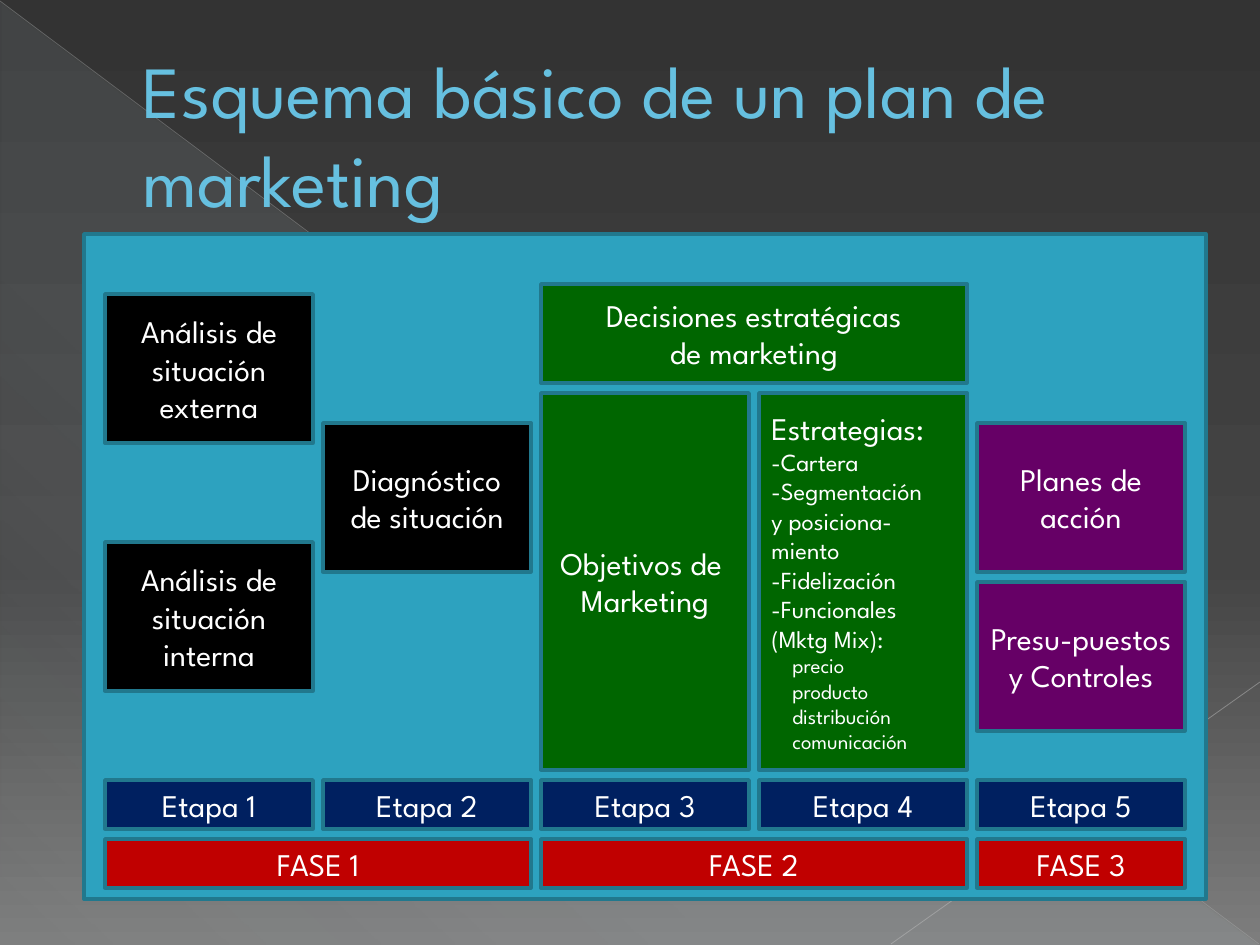
from lxml import etree
from pptx import Presentation
from pptx.dml.color import RGBColor
from pptx.enum.shapes import MSO_CONNECTOR as Connector, MSO_SHAPE as Shape
from pptx.enum.text import MSO_ANCHOR as Anchor, MSO_AUTO_SIZE as AutoSize, PP_ALIGN as Align
from pptx.oxml.ns import qn
from pptx.util import Emu, Pt

FONT = "League Spartan"
WHITE = RGBColor(0xFF, 0xFF, 0xFF)
SKY = RGBColor(0x66, 0xC0, 0xE0)
TEAL = RGBColor(0x2D, 0xA2, 0xBF)
EDGE = RGBColor(0x21, 0x78, 0x8D)
RED = RGBColor(0xC0, 0x00, 0x00)
NAVY = RGBColor(0x00, 0x20, 0x60)
BLACK = RGBColor(0x00, 0x00, 0x00)
GREEN = RGBColor(0x00, 0x66, 0x00)
PURPLE = RGBColor(0x66, 0x00, 0x66)
PALE = RGBColor(0xDE, 0xF5, 0xFA)
RAY_UPPER = RGBColor(0xB9, 0xB9, 0xB9)
RAY_LOWER = RGBColor(0xC1, 0xC1, 0xC1)
BACKGROUND = [(0, RGBColor(0x33, 0x33, 0x33), 100),
              (60, RGBColor(0x44, 0x44, 0x44), 100),
              (100, RGBColor(0x7D, 0x7D, 0x7D), 100)]
SHEEN = [(0, PALE, 10), (70, PALE, 8), (100, PALE, 1)]

# Column grid in px
LEFT, PITCH, GAP = 105, 218, 10
CARD_HEIGHT, LABEL_HEIGHT = 149, 49


def px(count):
    return Emu(round(count * 914400 / 126))


def set_opacity(color_element, percent):
    etree.SubElement(color_element, qn("a:alpha"), val=str(percent * 1000))


def paint_gradient(owner, stops, angle):
    """Swap the solid fill inside owner for a linear gradient."""
    gradient = etree.Element(qn("a:gradFill"), rotWithShape="1")
    stop_list = etree.SubElement(gradient, qn("a:gsLst"))
    for position, color, opacity in stops:
        stop = etree.SubElement(stop_list, qn("a:gs"), pos=str(position * 1000))
        color_element = etree.SubElement(stop, qn("a:srgbClr"), val=str(color))
        if opacity < 100:
            set_opacity(color_element, opacity)
    etree.SubElement(gradient, qn("a:lin"), ang=str(angle * 60000), scaled="0")
    owner.replace(owner.find(qn("a:solidFill")), gradient)


def write(para, text, size=18, color=WHITE, align=Align.CENTER, indent=0):
    para.text = text
    para.alignment = align
    if indent:
        properties = para._p.get_or_add_pPr()
        properties.set("marL", str(px(indent)))
        properties.set("indent", "0")
    for span in para.runs:
        span.font.name = FONT
        span.font.size = Pt(size)
        span.font.color.rgb = color


def add_block(slide, left, top, width, height, fill):
    box = slide.shapes.add_shape(Shape.RECTANGLE, px(left), px(top), px(width), px(height))
    box.shadow.inherit = False
    box.fill.solid()
    box.fill.fore_color.rgb = fill
    box.line.color.rgb = EDGE
    box.line.width = Pt(2)
    box.text_frame.word_wrap = True
    box.text_frame.vertical_anchor = Anchor.MIDDLE
    return box


def add_card(slide, column, top, height, fill, lines, span=1):
    """Place a block on the column grid; lines hold (text, format) pairs."""
    box = add_block(slide, LEFT + column * PITCH, top, span * PITCH - GAP, height, fill)
    frame = box.text_frame
    for index, (text, style) in enumerate(lines):
        para = frame.add_paragraph() if index else frame.paragraphs[0]
        write(para, text, **style)


def plain(*texts):
    return [(text, {}) for text in texts]


def add_ray(slide, start, end, color, width, opacity):
    ray = slide.shapes.add_connector(Connector.STRAIGHT, *map(px, start + end))
    ray.line.color.rgb = color
    ray.line.width = Pt(width)
    set_opacity(ray._element.spPr.find(".//" + qn("a:srgbClr")), opacity)
    etree.SubElement(ray._element.spPr, qn("a:effectLst"))


def add_backdrop(slide):
    slide.background.fill.solid()
    paint_gradient(slide.element.find(".//" + qn("p:bgPr")), BACKGROUND, 90)
    sheen = slide.shapes.add_shape(Shape.RIGHT_TRIANGLE, px(1), px(2), px(1258), px(943))
    sheen.shadow.inherit = False
    sheen.fill.solid()
    paint_gradient(sheen._element.spPr, SHEEN, 133)
    sheen.line.fill.background()
    add_ray(slide, (0, 1), (1259, 944), RAY_UPPER, 0.39, 35)
    add_ray(slide, (1260, 682), (891, 944), RAY_LOWER, 0.47, 45)


def format_title(slide, text):
    title = slide.shapes.title
    title.left, title.top, title.width, title.height = map(px, (63, 37, 1134, 193))
    title.text_frame.auto_size = AutoSize.NONE
    title.text_frame.word_wrap = True
    title.text_frame.vertical_anchor = Anchor.MIDDLE
    write(title.text_frame.paragraphs[0], text, size=42, color=SKY, align=Align.LEFT, indent=67)
    # Bring the title in front of the backdrop
    slide.shapes._spTree.append(title._element)


def main():
    deck = Presentation()
    deck.slide_width, deck.slide_height = px(1260), px(945)
    slide = deck.slides.add_slide(deck.slide_layouts[5])
    add_backdrop(slide)
    format_title(slide, "Esquema básico de un plan de marketing")
    add_block(slide, 84, 234, 1122, 665, TEAL)

    # Phases and stages
    for number, (column, span) in enumerate([(0, 2), (2, 2), (4, 1)], 1):
        add_card(slide, column, 839, LABEL_HEIGHT, RED, plain(f"FASE {number}"), span)
    for column in range(5):
        add_card(slide, column, 780, LABEL_HEIGHT, NAVY, plain(f"Etapa {column + 1}"))

    # Situation analysis
    add_card(slide, 1, 423, CARD_HEIGHT, BLACK, plain("Diagnóstico", "de situación"))
    for top, scope in [(294, "externa"), (542, "interna")]:
        add_card(slide, 0, top, CARD_HEIGHT, BLACK, plain(f"Análisis de situación {scope}"))

    # Strategic decisions
    add_card(slide, 2, 284, 99, GREEN, plain("Decisiones estratégicas", "de marketing"), span=2)
    add_card(slide, 2, 393, 377, GREEN, plain("Objetivos de ", "Marketing"))
    heading = {"align": Align.LEFT}
    item = {"align": Align.LEFT, "size": 14}
    detail = {"align": Align.LEFT, "size": 12, "indent": 21}
    strategies = [("Estrategias:", heading)]
    strategies += [(text, item) for text in (
        "-Cartera", "-Segmentación\vy posiciona-miento", "-Fidelización",
        "-Funcionales (Mktg Mix):")]
    strategies += [(text, detail) for text in (
        "precio", "producto", "distribución", "comunicación")]
    add_card(slide, 3, 393, 377, GREEN, strategies)

    # Action and control
    for top, text in [(423, "Planes de acción"), (582, "Presu-puestos y Controles")]:
        add_card(slide, 4, top, CARD_HEIGHT, PURPLE, plain(text))

    deck.save("out.pptx")


if __name__ == "__main__":
    main()
